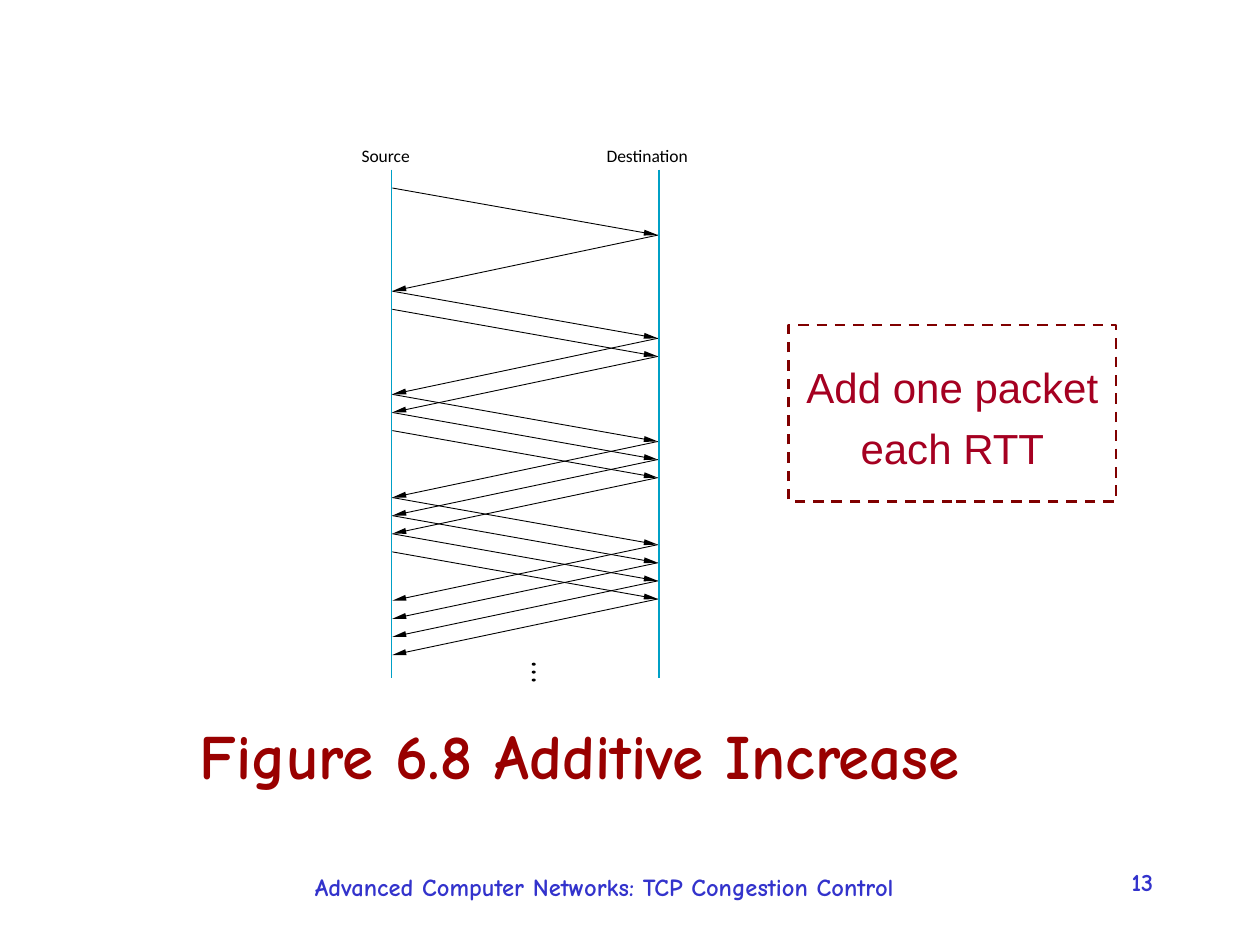
import math
from dataclasses import dataclass

import lxml.etree
import pptx
import pptx.dml.color
import pptx.enum.dml
import pptx.enum.shapes
import pptx.enum.text
import pptx.oxml.ns
import pptx.util

Cm = pptx.util.Cm
Pt = pptx.util.Pt
Align = pptx.enum.text.PP_ALIGN
Anchor = pptx.enum.text.MSO_ANCHOR
Shape = pptx.enum.shapes.MSO_SHAPE


@dataclass(frozen=True)
class Theme:
    title: str = "990000"
    footer: str = "3333CC"
    callout: str = "A50021"
    callout_border: str = "800000"
    ink: str = "000000"
    lifeline: str = "00A0C6"
    heading_font: str = "Comic Neue"
    callout_font: str = "Arial"
    label_font: str = "Calibri"
    title_size: int = 36
    callout_size: int = 24
    footer_size: int = 14
    label_size: int = 10


@dataclass(frozen=True)
class Box:
    left: float
    top: float
    width: float
    height: float

    def emu(self):
        return Cm(self.left), Cm(self.top), Cm(self.width), Cm(self.height)


THEME = Theme()


def rgb(color):
    return pptx.dml.color.RGBColor.from_string(color)


def style_text(frame, font, size, color, bold=False, align=Align.LEFT):
    for paragraph in frame.paragraphs:
        paragraph.alignment = align
        for run in paragraph.runs:
            run.font.name = font
            run.font.size = Pt(size)
            run.font.bold = bold
            run.font.color.rgb = rgb(color)


def add_heading(slide, box, wording, size, color, align=Align.LEFT, anchor=Anchor.TOP):
    frame = slide.shapes.add_textbox(*box.emu()).text_frame
    frame.word_wrap = True
    frame.vertical_anchor = anchor
    frame.text = wording
    style_text(frame, THEME.heading_font, size, color, True, align)


def add_label(slide, box, wording):
    frame = slide.shapes.add_textbox(*box.emu()).text_frame
    frame.margin_left = frame.margin_right = frame.margin_top = frame.margin_bottom = 0
    frame.word_wrap = False
    frame.text = wording
    style_text(frame, THEME.label_font, THEME.label_size, THEME.ink)


def add_line(slide, start, end, color, width):
    line = slide.shapes.add_connector(
        pptx.enum.shapes.MSO_CONNECTOR.STRAIGHT, *(Cm(value) for value in (*start, *end))
    )
    line.line.color.rgb = rgb(color)
    line.line.width = Pt(width)
    lxml.etree.SubElement(line._element.spPr, pptx.oxml.ns.qn("a:effectLst"))


def fill_plain(shape, color):
    shape.shadow.inherit = False
    shape.fill.solid()
    shape.fill.fore_color.rgb = rgb(color)
    shape.line.fill.background()


def add_message(slide, start, tip, head_length=0.28, head_half_width=0.06):
    run, rise = tip[0] - start[0], tip[1] - start[1]
    length = math.hypot(run, rise)
    across, down = run / length, rise / length
    base = tip[0] - head_length * across, tip[1] - head_length * down
    corners = [
        (base[0] - side * head_half_width * down, base[1] + side * head_half_width * across)
        for side in (1, -1)
    ]
    add_line(slide, start, base, THEME.ink, 0.5)
    outline = slide.shapes.build_freeform(Cm(tip[0]), Cm(tip[1]))
    outline.add_line_segments([(Cm(x), Cm(y)) for x, y in corners], close=True)
    fill_plain(outline.convert_to_shape(), THEME.ink)


def add_sequence_diagram(slide, box, rounds=4):
    source_x, destination_x = box.left, box.left + box.width
    bottom = box.top + box.height
    round_trip, packet_gap, one_way = 2.08, 0.365, 0.95

    add_label(slide, Box(source_x - 0.6, box.top, 1.12, 0.43), "Source")
    add_label(slide, Box(destination_x - 1.05, box.top, 1.75, 0.43), "Destination")
    for x in (source_x, destination_x):
        add_line(slide, (x, box.top + 0.5), (x, bottom), THEME.lifeline, 1)

    for round_number in range(rounds):
        for packet in range(round_number + 1):
            sent = box.top + 0.87 + round_number * round_trip + packet * packet_gap
            source = source_x + 0.02, sent
            destination = destination_x - 0.02, sent + one_way
            add_message(slide, source, destination)
            add_message(slide, destination, (source[0], sent + round_trip))

    for dot in range(3):
        dot_box = Box(source_x + 2.83, bottom - 0.31 + dot * 0.16, 0.08, 0.06)
        fill_plain(slide.shapes.add_shape(Shape.OVAL, *dot_box.emu()), THEME.ink)


def add_callout(slide, box):
    callout = slide.shapes.add_shape(Shape.RECTANGLE, *box.emu())
    callout.shadow.inherit = False
    callout.fill.background()
    callout.line.color.rgb = rgb(THEME.callout_border)
    callout.line.width = Pt(1.5)
    callout.line.dash_style = pptx.enum.dml.MSO_LINE.DASH
    frame = callout.text_frame
    frame.word_wrap = False
    frame.vertical_anchor = Anchor.MIDDLE
    frame.margin_top = Cm(0.3)
    frame.text = "Add one packet\neach RTT"
    frame.paragraphs[1].space_before = Pt(6)
    style_text(frame, THEME.callout_font, THEME.callout_size, THEME.callout, align=Align.CENTER)


def add_footer(slide, box):
    add_heading(
        slide, Box(box.left, box.top + 0.1, 13.8, 1.07),
        "Advanced Computer Networks: TCP Congestion Control",
        THEME.footer_size, THEME.footer,
    )
    number_width = 3.81
    add_heading(
        slide, Box(box.left + box.width - number_width, box.top, number_width, box.height),
        "13", THEME.footer_size, THEME.footer, Align.RIGHT,
    )


def main():
    presentation = pptx.Presentation()
    presentation.slide_width = Cm(25.4)
    presentation.slide_height = Cm(19.05)
    slide = presentation.slides.add_slide(presentation.slide_layouts[6])
    add_footer(slide, Box(6.1, 17.35, 17.4, 1.27))
    add_heading(
        slide, Box(0.89, 13.92, 21.59, 2.57), "Figure 6.8 Additive Increase",
        THEME.title_size, THEME.title, Align.CENTER, Anchor.MIDDLE,
    )
    add_sequence_diagram(slide, Box(7.89, 2.92, 5.39, 10.75))
    add_callout(slide, Box(15.9, 6.55, 6.6, 3.56))
    presentation.save("out.pptx")


if __name__ == "__main__":
    main()
